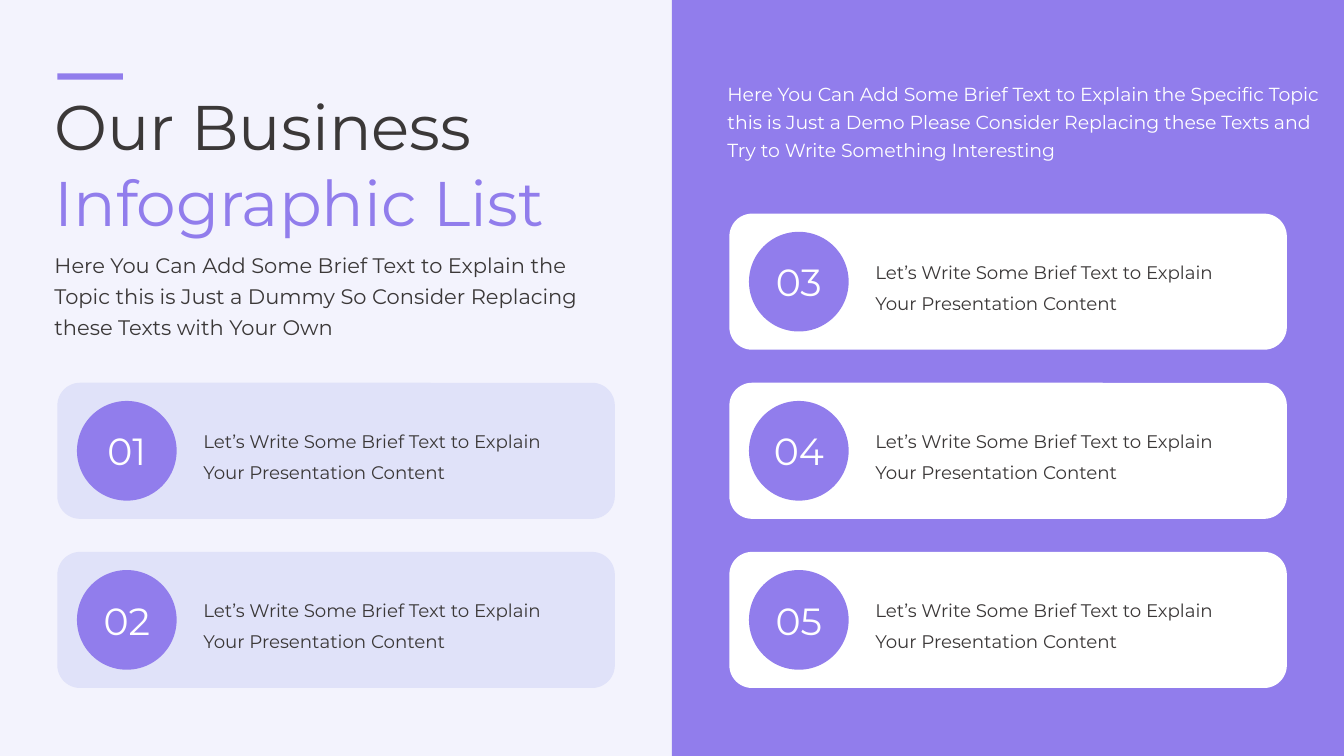
from dataclasses import dataclass

import lxml.etree
import pptx
import pptx.dml.color
import pptx.enum.shapes
import pptx.enum.text
import pptx.oxml.ns
import pptx.util

Pt = pptx.util.Pt
SHAPE = pptx.enum.shapes.MSO_SHAPE
ALIGN = pptx.enum.text.PP_ALIGN
ANCHOR = pptx.enum.text.MSO_ANCHOR

FONT = "Montserrat"
PURPLE, LILAC, PALE, WHITE, DARK = "917DEC", "E0E2F9", "F3F3FD", "FFFFFF", "3B3838"

HALF = 480  # width of each half of the slide
MARGIN = 41  # card inset within its half
TOP_ROW, ROW_PITCH = 152.6, 120.8
CARD_W, CARD_H = 398.2, 97.2
CIRCLE = 71.2
CARD_TEXT = "Let’s Write Some Brief Text to Explain\nYour Presentation Content"


@dataclass
class Card:
    number: str
    half: int
    row: int
    fill: str


CARDS = [
    Card("01", 0, 1, LILAC),
    Card("02", 0, 2, LILAC),
    Card("03", 1, 0, WHITE),
    Card("04", 1, 1, WHITE),
    Card("05", 1, 2, WHITE),
]


def paint(fill, color: str) -> None:
    fill.solid()
    fill.fore_color.rgb = pptx.dml.color.RGBColor.from_string(color)


def place(sp, x: float, y: float, w: float, h: float) -> None:
    sp.left, sp.top, sp.width, sp.height = Pt(x), Pt(y), Pt(w), Pt(h)


def add_block(s, kind, x: float, y: float, w: float, h: float, color: str):
    sp = s.shapes.add_shape(kind, Pt(x), Pt(y), Pt(w), Pt(h))
    sp.shadow.inherit = False
    paint(sp.fill, color)
    sp.line.fill.background()
    return sp


def write(sp, text: str, size: float, color: str, leading: float = 0,
          align=ALIGN.LEFT, anchor=ANCHOR.TOP, wrap: bool = True) -> None:
    tf = sp.text_frame
    tf.text = text
    tf.word_wrap = wrap
    tf.auto_size = pptx.enum.text.MSO_AUTO_SIZE.NONE
    tf.vertical_anchor = anchor
    for p in tf.paragraphs:
        p.alignment = align
        p.space_before = Pt(0)
        p.line_spacing = Pt(leading) if leading else 1.0
        for r in p.runs:
            r.font.name, r.font.size = FONT, Pt(size)
            paint(r.font.fill, color)


def remove_bullets(sp) -> None:
    for p in sp.text_frame.paragraphs:
        pPr = p._p.get_or_add_pPr()
        pPr.set("marL", "0")
        pPr.set("indent", "0")
        lxml.etree.SubElement(pPr, pptx.oxml.ns.qn("a:buNone"))


def add_card(s, card: Card) -> None:
    x = MARGIN + card.half * HALF
    y = TOP_ROW + card.row * ROW_PITCH
    add_block(s, SHAPE.ROUNDED_RECTANGLE, x, y, CARD_W, CARD_H, card.fill)
    sp = add_block(s, SHAPE.OVAL, x + 14, y + (CARD_H - CIRCLE) / 2, CIRCLE, CIRCLE, PURPLE)
    write(sp, card.number, 27, WHITE, align=ALIGN.CENTER, anchor=ANCHOR.MIDDLE, wrap=False)
    sp = s.shapes.add_textbox(Pt(x + 97.2), Pt(y + 24), Pt(262), Pt(49.7))
    write(sp, CARD_TEXT, 13, DARK, leading=22, wrap=False)


def main() -> None:
    prs = pptx.Presentation()
    prs.slide_width, prs.slide_height = Pt(2 * HALF), Pt(540)
    s = prs.slides.add_slide(prs.slide_layouts[1])
    paint(s.background.fill, PALE)

    # Heading and introduction on the left
    title, intro = s.shapes.title, s.placeholders[1]
    place(title, 31.7, 59, 396, 116.6)
    write(title, "Our Business\nInfographic List", 45, DARK, wrap=False)
    paint(title.text_frame.paragraphs[1].runs[0].font.fill, PURPLE)
    place(intro, 31.7, 172.8, 396, 72)
    write(intro, "Here You Can Add Some Brief Text to Explain the\n"
                 "Topic this is Just a Dummy So Consider Replacing\n"
                 "these Texts with Your Own", 15, DARK, leading=22)
    remove_bullets(intro)
    add_block(s, SHAPE.RECTANGLE, MARGIN, 52.4, 46.8, 4.6, PURPLE)

    # Purple half with its own introduction
    add_block(s, SHAPE.RECTANGLE, HALF, 0, HALF, 540, PURPLE)
    sp = s.shapes.add_textbox(Pt(512.5), Pt(51.8), Pt(440.6), Pt(66.2))
    write(sp, "Here You Can Add Some Brief Text to Explain the Specific Topic "
              "this is Just a Demo Please Consider Replacing these Texts and "
              "Try to Write Something Interesting", 13.5, WHITE, leading=20)

    # Numbered cards
    for card in CARDS:
        add_card(s, card)

    prs.save("out.pptx")


if __name__ == "__main__":
    main()
